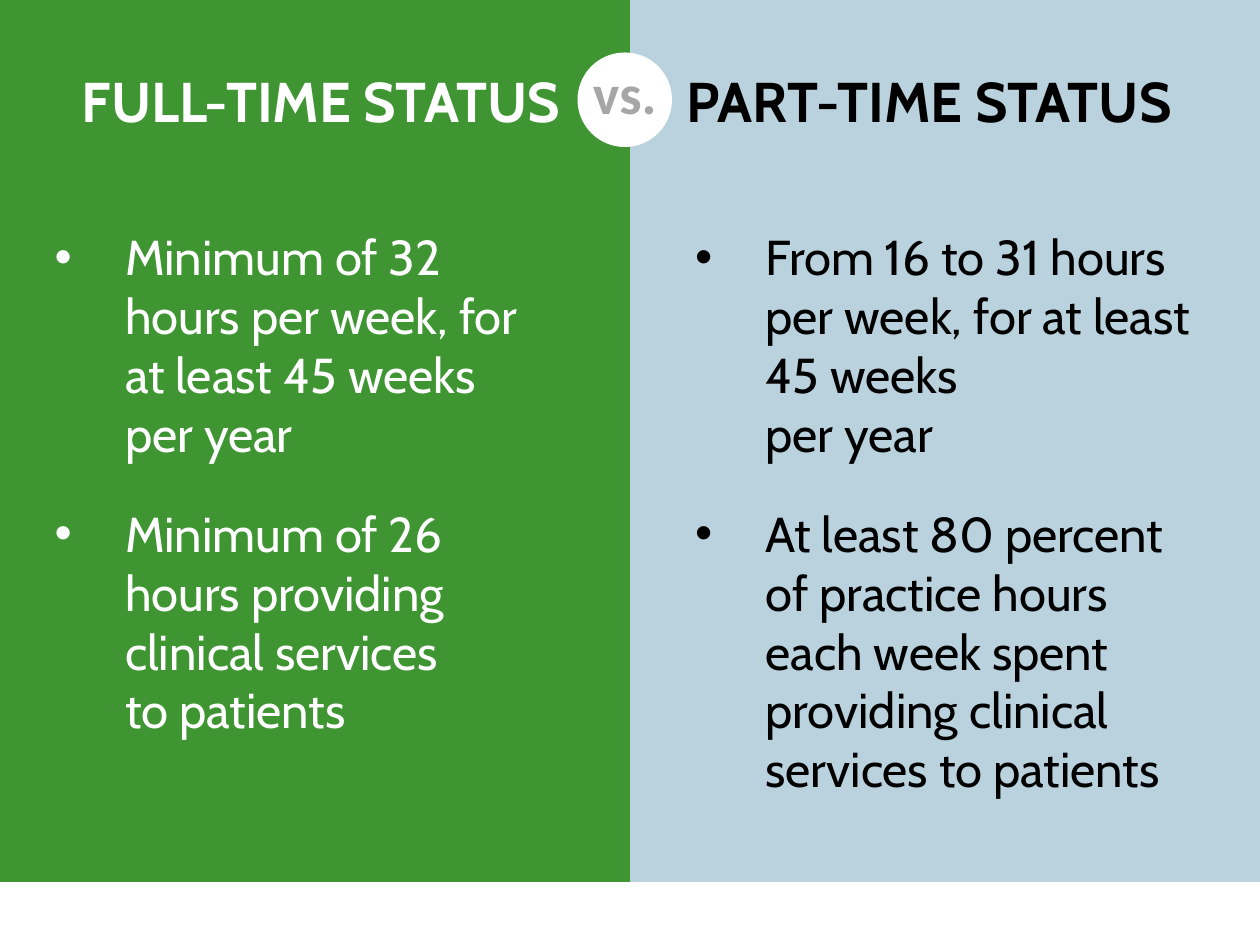
import pptx
import pptx.util
import pptx.dml.color
import pptx.enum.shapes
import pptx.enum.text

RGBColor = pptx.dml.color.RGBColor
GREEN = RGBColor(0x3E, 0x95, 0x32)
BLUE = RGBColor(0xBA, 0xD2, 0xDD)
WHITE = RGBColor(0xFF, 0xFF, 0xFF)
BLACK = RGBColor(0, 0, 0)
GRAY = RGBColor(0xA6, 0xA6, 0xA6)

Pt = pptx.util.Pt
Inches = pptx.util.Inches
SHAPE = pptx.enum.shapes.MSO_SHAPE
ALIGN = pptx.enum.text.PP_ALIGN
ANCHOR = pptx.enum.text.MSO_ANCHOR
FIT = pptx.enum.text.MSO_AUTO_SIZE

WIDTH, HEIGHT = Inches(10), Inches(7.5)
COL = ROW = WIDTH / 24

HEADING = {"name": "Cabin", "size": Pt(32), "bold": True}
BODY = {"name": "Cabin", "size": Pt(28)}
BADGE = {"name": "Calibri", "size": Pt(32), "bold": True}


def grid(left, top, width, height):
    return int(left * COL), int(top * ROW), int(width * COL), int(height * ROW)


def apply(obj, values):
    for key, value in values.items():
        setattr(obj, key, value)


def set_font(font, values, color):
    apply(font, values)
    font.color.rgb = color


def place(sp, box):
    apply(sp, dict(zip(("left", "top", "width", "height"), box)))


def add_fill(s, kind, box, color):
    sp = s.shapes.add_shape(kind, *box)
    sp.shadow.inherit = False
    sp.fill.solid()
    sp.fill.fore_color.rgb = color
    sp.line.fill.background()


def bring_to_front(s, sp):
    s.shapes._spTree.append(sp._element)


def add_title(s, box, parts, start, tab):
    sp = s.shapes.title
    place(sp, box)
    bring_to_front(s, sp)
    tf = sp.text_frame
    apply(tf, {"auto_size": FIT.NONE, "word_wrap": True,
               "vertical_anchor": ANCHOR.MIDDLE,
               "margin_left": start, "margin_right": 0})
    p = tf.paragraphs[0]
    p.alignment = ALIGN.LEFT
    pPr = p._p.get_or_add_pPr()
    tabs = pPr.makeelement(pptx.oxml.ns.qn("a:tabLst"), {})
    stop = tabs.makeelement(pptx.oxml.ns.qn("a:tab"),
                            {"pos": str(tab - start), "algn": "l"})
    tabs.append(stop)
    pPr.append(tabs)
    for text, color in parts:
        r = p.add_run()
        r.text = text
        set_font(r.font, HEADING, color)


def add_list(s, sp, box, items, color):
    place(sp, box)
    bring_to_front(s, sp)
    tf = sp.text_frame
    apply(tf, {"auto_size": FIT.NONE, "word_wrap": True})
    indent = Inches(0.56)
    for i, item in enumerate(items):
        p = tf.add_paragraph() if i else tf.paragraphs[0]
        p.text = item
        p.space_before = Pt(5.6 if i else 0)
        p.space_after = Pt(18)
        pPr = p._p.get_or_add_pPr()
        pPr.set("marL", str(indent))
        pPr.set("indent", str(-indent))
        for r in p.runs:
            set_font(r.font, BODY, color)


def add_badge(s, box, text):
    left, top, width, height = box
    add_fill(s, SHAPE.OVAL, box, WHITE)
    sp = s.shapes.add_textbox(left, top, width, int(height * 0.85))
    tf = sp.text_frame
    tf.word_wrap = True
    p = tf.paragraphs[0]
    p.alignment = ALIGN.CENTER
    r = p.add_run()
    r.text = text
    set_font(r.font, BADGE, GRAY)


def build_comparison(prs):
    s = prs.slides.add_slide(prs.slide_layouts[3])
    add_fill(s, SHAPE.RECTANGLE, grid(12, 0, 12, 16.8), BLUE)
    add_fill(s, SHAPE.RECTANGLE, grid(0, 0, 12, 16.8), GREEN)
    add_list(s, s.placeholders[1], grid(0.8, 4.2, 10, 12), [
        "Minimum of 32 hours per week, for at least 45 weeks per year",
        "Minimum of 26 hours providing clinical services \nto patients",
    ], WHITE)
    add_list(s, s.placeholders[2], grid(13, 4.2, 10.2, 12), [
        "From 16 to 31 hours per week, for at least 45 weeks \nper year",
        "At least 80 percent of practice hours each week spent "
        "providing clinical services to patients",
    ], BLACK)
    add_badge(s, grid(11, 1, 1.8, 1.8), "vs.")
    add_title(s, grid(0, 1, 24, 1.8),
              [("FULL-TIME STATUS\t", WHITE), ("PART-TIME STATUS", BLACK)],
              Inches(0.65), Inches(5.45))


def main():
    prs = pptx.Presentation()
    prs.slide_width, prs.slide_height = WIDTH, HEIGHT
    build_comparison(prs)
    prs.save("out.pptx")


if __name__ == "__main__":
    main()
